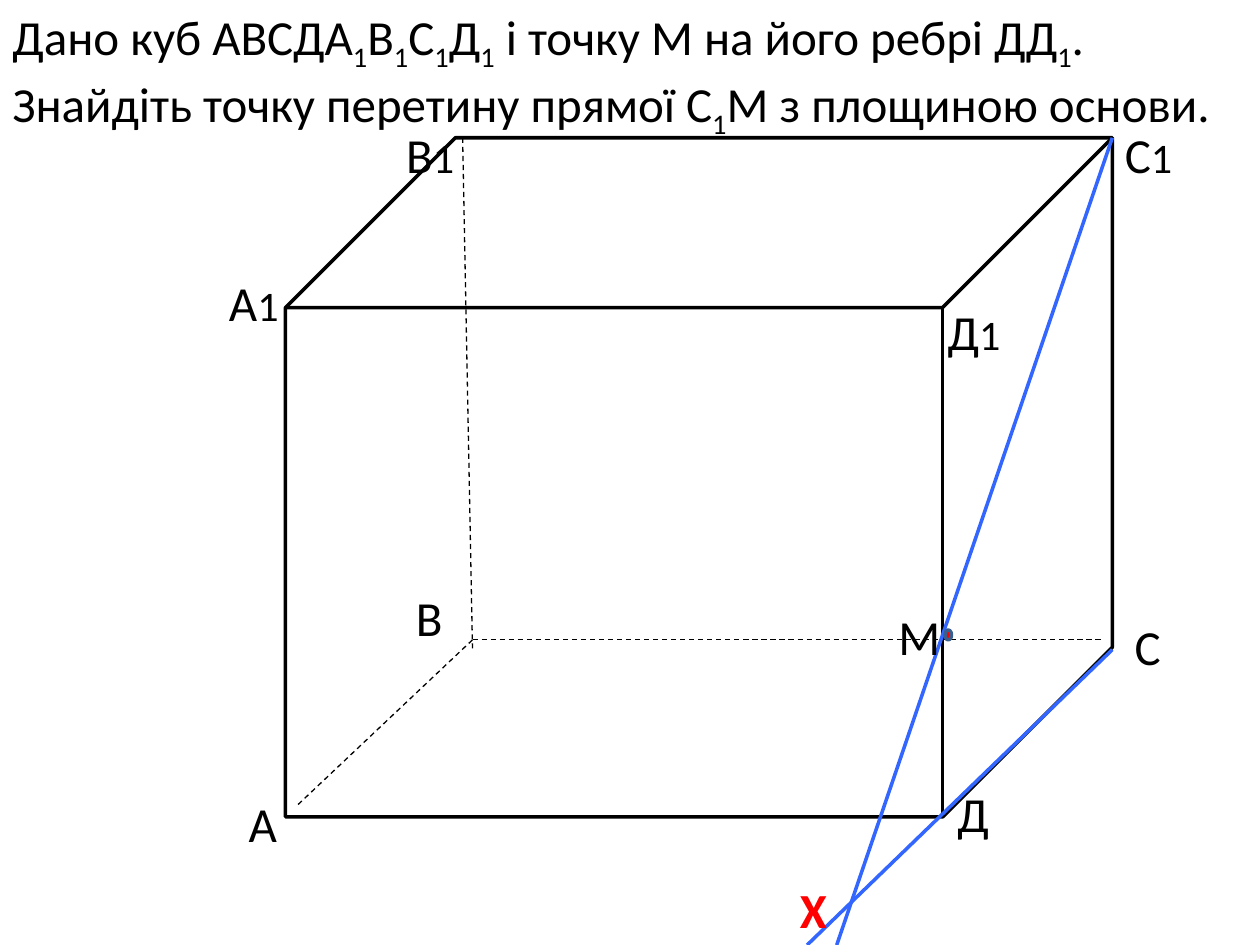
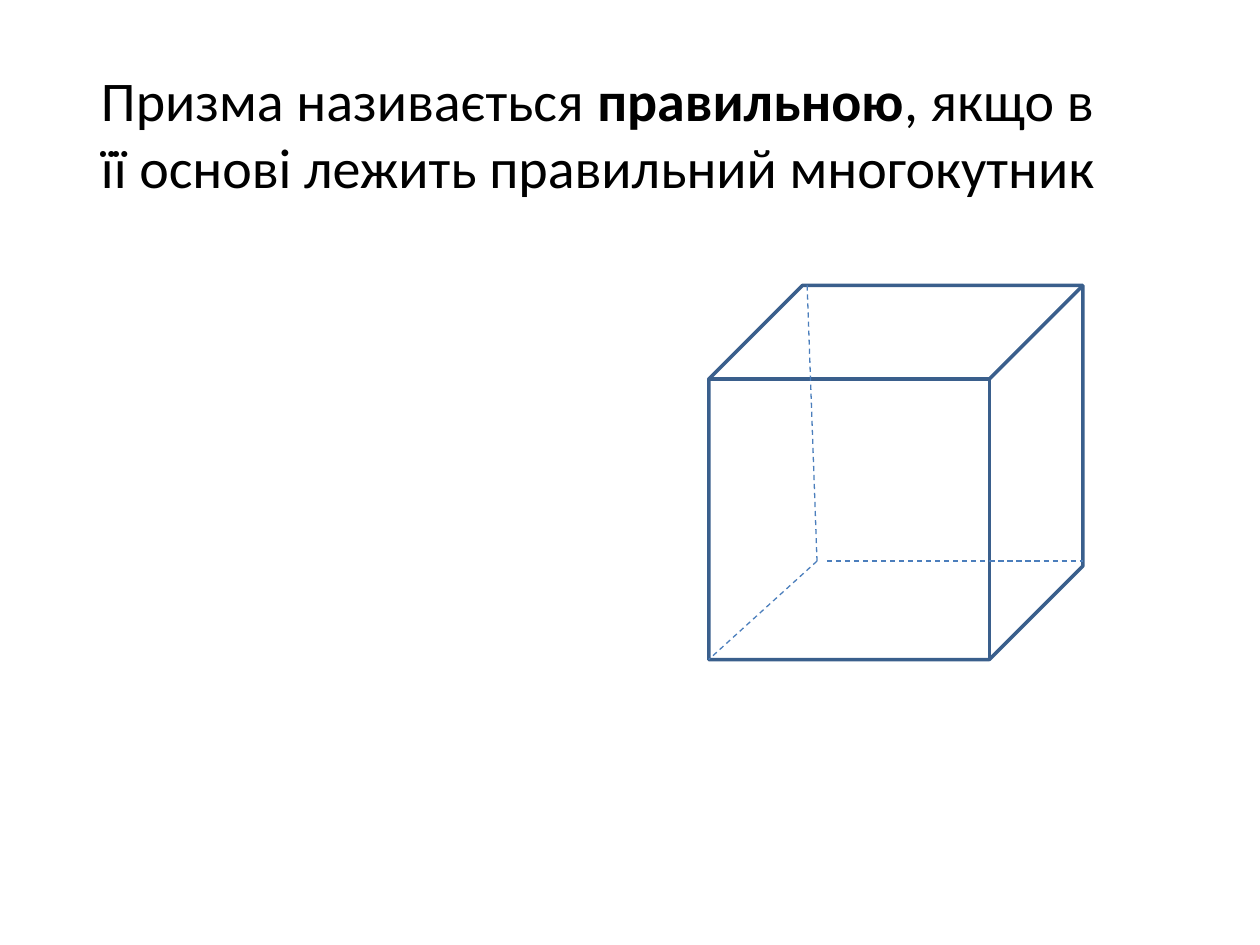
from pptx import Presentation
from pptx.dml.color import RGBColor
from pptx.enum.dml import MSO_LINE
from pptx.enum.shapes import MSO_CONNECTOR as CONNECTOR, MSO_SHAPE as SHAPE
from pptx.enum.text import PP_ALIGN as ALIGN
from pptx.oxml.ns import qn
from pptx.util import Pt
from lxml import etree

BLACK = RGBColor(0x00, 0x00, 0x00)
RED = RGBColor(0xFF, 0x00, 0x00)
CONSTRUCTION = RGBColor(0x33, 0x66, 0xFF)
EDGE = RGBColor(0x3A, 0x5F, 0x8C)
HIDDEN_EDGE = RGBColor(0x4B, 0x7E, 0xBC)
FONT = "Calibri"
LABEL_SIZE, INDEX_SIZE = 28, 24
LABEL_WIDTH, INDEXED_WIDTH, LABEL_HEIGHT = 34, 44.75, 41.25
SOLID_WIDTH, DASH_WIDTH = 2, 0.75

# Content: in the problem "_" marks a subscript digit, "*" encloses bold text
PROBLEM = ("Дано куб АВСДА_1В_1С_1Д_1 і точку М на його ребрі ДД_1. "
           "Знайдіть точку перетину прямої С_1М з площиною основи.")
DEFINITION = "Призма називається *правильною*, якщо в її основі лежить правильний многокутник"

# Vertex labels: letter, index, left, top
VERTICES = [
    ("А", "", 135, 450), ("В", "", 230.63, 331.88),
    ("С", "", 641.25, 348.75), ("Д", "", 540, 444.38),
    ("А", "1", 123.75, 151.88), ("В", "1", 225, 67.5),
    ("С", "1", 635.63, 67.5), ("Д", "1", 534.38, 168.75),
]
POINT_M = ("М", "", 506.25, 343.13)
POINT_X = ("Х", "", 450, 499)

# Cubes: left, top, width, height; hidden edges as point pairs
BIG_CUBE = (163.13, 78.75, 472.5, 388.13)
BIG_HIDDEN = [((264.38, 78.75), (270, 371.25)),
              ((270, 365.63), (630, 365.63)),
              ((270, 365.63), (168.75, 461.25))]
SMALL_CUBE = (405, 163.13, 213.75, 213.75)
SMALL_HIDDEN = [((461.25, 163.13), (466.88, 320.63)),
                ((472.5, 320.63), (618.75, 320.63)),
                ((466.88, 320.63), (405, 376.88))]
# Lines СД and С1М, prolonged to the bottom of the slide
CONSTRUCTION_LINES = [((635.63, 371.25), (461.25, 540)),
                      ((635.63, 78.75), (478.13, 540))]
DOT_M = (540, 360, 3.75, 5.63)


def add_shape(slide, kind, box, line_color, fill=None):
    shape = slide.shapes.add_shape(kind, *map(Pt, box))
    shape.shadow.inherit = False
    if fill is None:
        shape.fill.background()
    else:
        shape.fill.solid()
        shape.fill.fore_color.rgb = fill
    shape.line.color.rgb = line_color
    shape.line.width = Pt(SOLID_WIDTH)


def add_line(slide, start, end, color, dashed=False):
    line = slide.shapes.add_connector(CONNECTOR.STRAIGHT, *map(Pt, start + end))
    line.line.color.rgb = color
    line.line.width = Pt(DASH_WIDTH if dashed else SOLID_WIDTH)
    if dashed:
        line.line.dash_style = MSO_LINE.DASH
    etree.SubElement(line._element.spPr, qn("a:effectLst"))


def add_cube(slide, box, hidden_edges, color, hidden_color):
    add_shape(slide, SHAPE.CUBE, box, color)
    for start, end in hidden_edges:
        add_line(slide, start, end, hidden_color, dashed=True)


def add_text(slide, box, parts, color=BLACK):
    """Each part is (text, size, bold, subscript)."""
    frame = slide.shapes.add_textbox(*map(Pt, box)).text_frame
    frame.word_wrap = True
    paragraph = frame.paragraphs[0]
    paragraph.alignment = ALIGN.LEFT
    for text, size, bold, subscript in parts:
        run = paragraph.add_run()
        run.text = text
        run.font.name = FONT
        run.font.size = Pt(size)
        run.font.bold = bold
        run.font.color.rgb = color
        if subscript:
            run.font._element.set("baseline", "-25000")


def subscript_parts(text, size):
    first, *rest = text.split("_")
    parts = [(first, size, False, False)]
    for piece in rest:
        parts += [(piece[0], size, False, True), (piece[1:], size, False, False)]
    return [part for part in parts if part[0]]


def bold_parts(text, size):
    return [(piece, size, i % 2 == 1, False) for i, piece in enumerate(text.split("*"))]


def add_label(slide, letter, index, left, top, color=BLACK, bold=False):
    parts = [(letter, LABEL_SIZE, bold, False)]
    if index:
        parts.append((index, INDEX_SIZE, bold, False))
    width = INDEXED_WIDTH if index else LABEL_WIDTH
    add_text(slide, (left, top, width, LABEL_HEIGHT), parts, color)


def build_problem(slide):
    add_cube(slide, BIG_CUBE, BIG_HIDDEN, BLACK, BLACK)
    add_text(slide, (0, 0, 720, 75), subscript_parts(PROBLEM, 28))
    for vertex in VERTICES:
        add_label(slide, *vertex)
    # Construction of the intersection point
    for start, end in CONSTRUCTION_LINES:
        add_line(slide, start, end, CONSTRUCTION)
    add_shape(slide, SHAPE.OVAL, DOT_M, EDGE, RED)
    add_label(slide, *POINT_M)
    add_label(slide, *POINT_X, color=RED, bold=True)


def build_definition(slide):
    add_cube(slide, SMALL_CUBE, SMALL_HIDDEN, EDGE, HIDDEN_EDGE)
    add_text(slide, (50.63, 33.75, 602, 85), bold_parts(DEFINITION, 32))


def main():
    deck = Presentation()
    deck.slide_width, deck.slide_height = Pt(720), Pt(540)
    for build in (build_problem, build_definition):
        build(deck.slides.add_slide(deck.slide_layouts[6]))
    deck.save("out.pptx")


if __name__ == "__main__":
    main()
